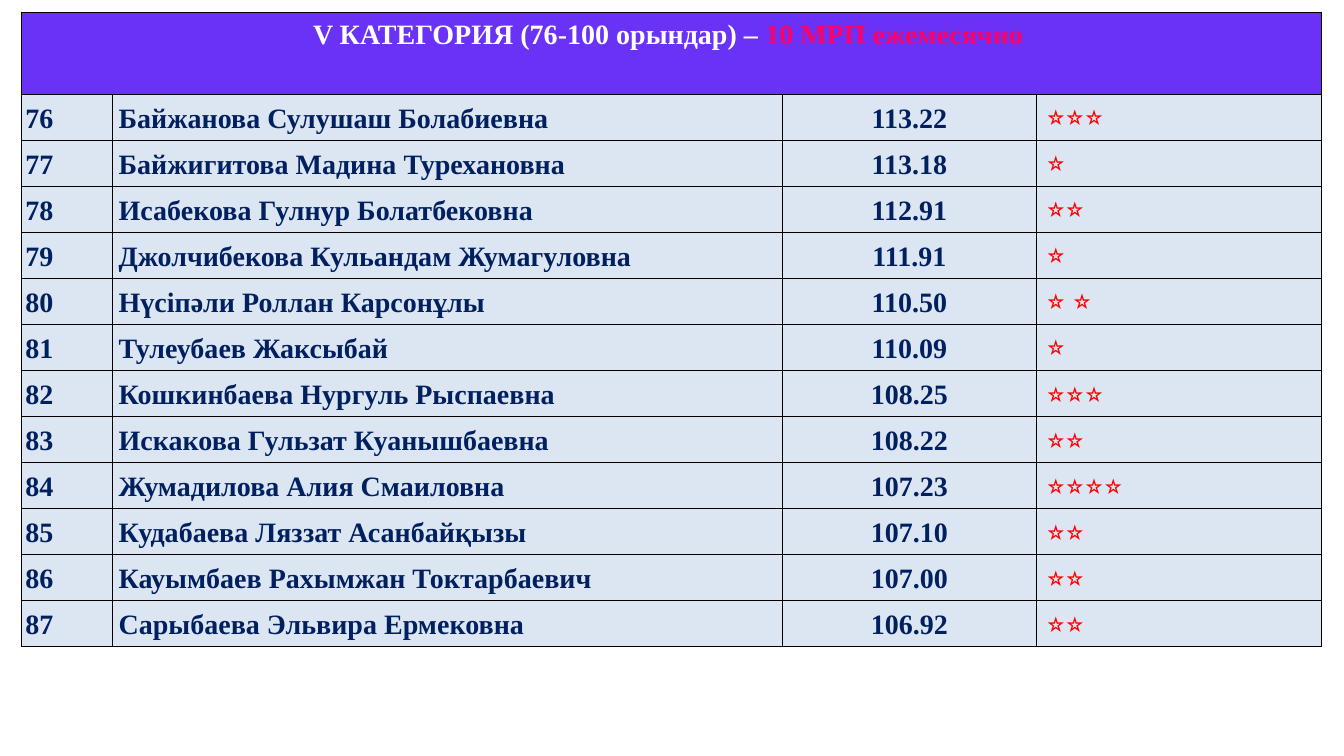
from dataclasses import dataclass

from lxml.etree import SubElement
from pptx import Presentation
from pptx.dml.color import RGBColor
from pptx.enum.text import MSO_ANCHOR, PP_ALIGN
from pptx.oxml.ns import qn
from pptx.table import _Cell
from pptx.text.text import _Run
from pptx.util import Cm, Pt

FONT = "Times New Roman"
NAVY, RED, PINK, WHITE = "002060", "FF0000", "FF0066", "FFFFFF"
PURPLE, PALE_BLUE, BLACK = "6A32F6", "DCE6F2", "000000"
FIRST_PLACE = 76
HEADER_HEIGHT, ROW_HEIGHT = 2.07, 1.16


@dataclass(frozen=True)
class Column:
    width: float
    margin: float
    color: str = NAVY
    bold: bool = True
    align: PP_ALIGN = PP_ALIGN.LEFT
    anchor: MSO_ANCHOR = MSO_ANCHOR.MIDDLE


@dataclass(frozen=True)
class Teacher:
    name: str
    score: str
    stars: str


COLUMNS = [
    Column(2.29, 0.1),
    Column(16.89, 0.16),
    Column(6.4, 0.16, align=PP_ALIGN.CENTER),
    Column(7.19, 0.25, RED, False, anchor=MSO_ANCHOR.TOP),
]
HEADER = Column(0, 0.1, align=PP_ALIGN.CENTER, anchor=MSO_ANCHOR.TOP)
TEACHERS = [
    Teacher("Байжанова Сулушаш Болабиевна", "113.22", "⭐⭐⭐"),
    Teacher("Байжигитова Мадина Турехановна", "113.18", "⭐"),
    Teacher("Исабекова Гулнур Болатбековна", "112.91", "⭐⭐"),
    Teacher("Джолчибекова Кульандам Жумагуловна", "111.91", "⭐"),
    Teacher("Нүсіпәли Роллан Карсонұлы", "110.50", "⭐ ⭐"),
    Teacher("Тулеубаев Жаксыбай", "110.09", "⭐"),
    Teacher("Кошкинбаева Нургуль Рыспаевна", "108.25", "⭐⭐⭐"),
    Teacher("Искакова Гульзат Куанышбаевна", "108.22", "⭐⭐"),
    Teacher("Жумадилова Алия Смаиловна", "107.23", "⭐⭐⭐⭐"),
    Teacher("Кудабаева Ляззат Асанбайқызы", "107.10", "⭐⭐"),
    Teacher("Кауымбаев Рахымжан Токтарбаевич", "107.00", "⭐⭐"),
    Teacher("Сарыбаева Эльвира Ермековна", "106.92", "⭐⭐"),
]


def rgb(value: str) -> RGBColor:
    return RGBColor.from_string(value)


def style_run(r: _Run, color: str, bold: bool) -> None:
    r.font.name = FONT
    r.font.size = Pt(20)
    r.font.bold = bold
    r.font.color.rgb = rgb(color)


def add_borders(cell: _Cell) -> None:
    tc_pr = cell._tc.get_or_add_tcPr()
    for side in ("lnL", "lnR", "lnT", "lnB"):
        ln = SubElement(tc_pr, qn(f"a:{side}"), w=str(int(Pt(0.96))))
        fill = SubElement(ln, qn("a:solidFill"))
        SubElement(fill, qn("a:srgbClr"), val=BLACK)


def fill_cell(cell: _Cell, text: str, column: Column, fill: str) -> None:
    cell.fill.solid()
    cell.fill.fore_color.rgb = rgb(fill)
    cell.margin_left = cell.margin_right = Cm(column.margin)
    cell.margin_top = cell.margin_bottom = Cm(0.13)
    cell.vertical_anchor = column.anchor
    cell.text_frame.text = text
    p = cell.text_frame.paragraphs[0]
    p.alignment = column.align
    p.line_spacing = 1.07
    style_run(p.runs[0], column.color, column.bold)


def main() -> None:
    prs = Presentation()
    prs.slide_width, prs.slide_height = Cm(33.87), Cm(19.05)
    s = prs.slides.add_slide(prs.slide_layouts[6])
    width = sum(column.width for column in COLUMNS)
    height = HEADER_HEIGHT + ROW_HEIGHT * len(TEACHERS)
    table = s.shapes.add_table(
        len(TEACHERS) + 1, len(COLUMNS), Cm(0.54), Cm(0.31), Cm(width), Cm(height)
    ).table
    table.first_row = table.horz_banding = False

    for i, column in enumerate(COLUMNS):
        table.columns[i].width = Cm(column.width)
    for i, row in enumerate(table.rows):
        row.height = Cm(ROW_HEIGHT if i else HEADER_HEIGHT)
    for cell in table.iter_cells():
        add_borders(cell)

    header = table.cell(0, 0)
    header.merge(table.cell(0, len(COLUMNS) - 1))
    fill_cell(header, "V КАТЕГОРИЯ (76-100 орындар) – ", HEADER, PURPLE)
    p = header.text_frame.paragraphs[0]
    p.add_run().text = "10 МРП ежемесячно "
    for r, color in zip(p.runs, (WHITE, PINK)):
        style_run(r, color, True)

    for i, teacher in enumerate(TEACHERS):
        texts = (str(FIRST_PLACE + i), teacher.name, teacher.score, teacher.stars)
        for j, (text, column) in enumerate(zip(texts, COLUMNS)):
            fill_cell(table.cell(i + 1, j), text, column, PALE_BLUE)

    prs.save("out.pptx")


if __name__ == "__main__":
    main()
